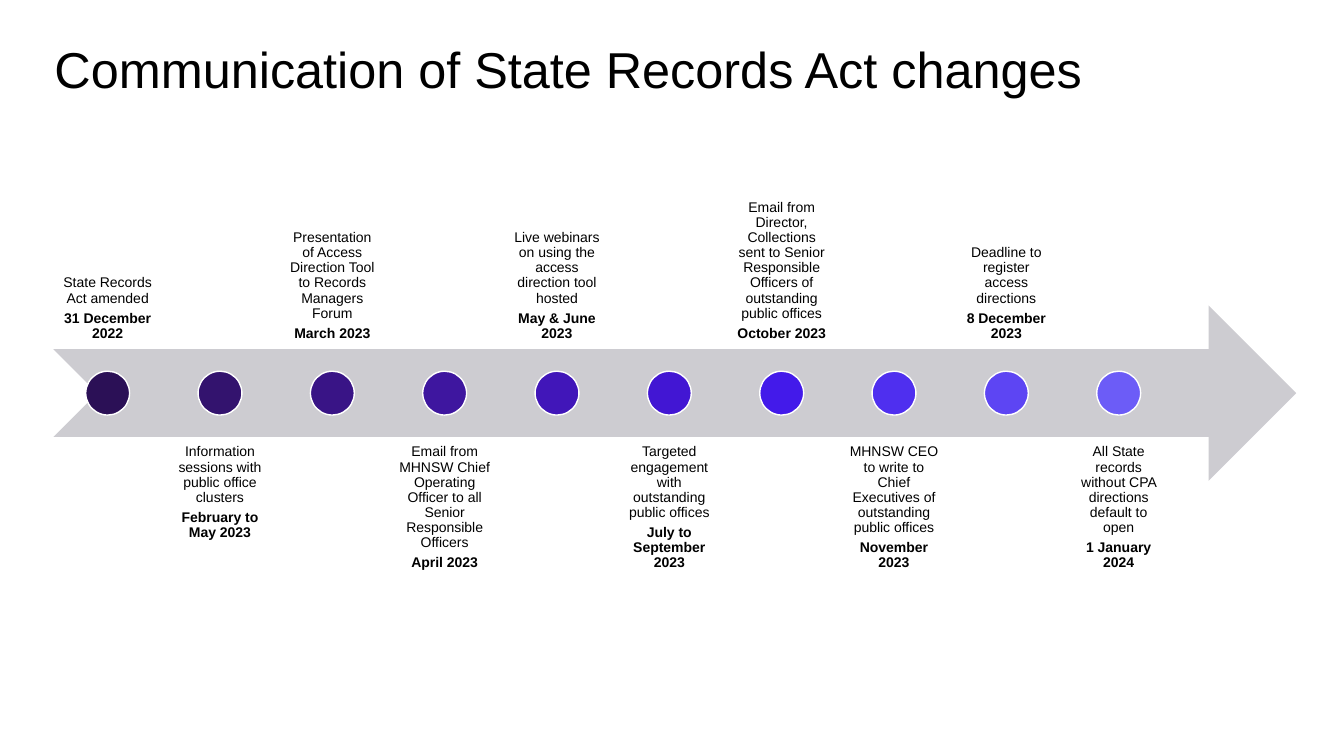
from pptx import Presentation
from pptx.dml.color import RGBColor
from pptx.enum.shapes import MSO_SHAPE
from pptx.enum.text import MSO_ANCHOR, PP_ALIGN
from pptx.util import Pt

MILESTONES = [
    ("State Records Act amended", "31 December 2022", "2B1056"),
    ("Information sessions with public office clusters", "February to May 2023", "33136E"),
    ("Presentation of Access Direction Tool to Records Managers Forum", "March 2023", "391486"),
    ("Email from MHNSW Chief Operating Officer to all Senior Responsible Officers",
     "April 2023", "3E169F"),
    ("Live webinars on using the access direction tool hosted", "May & June 2023", "4116B9"),
    ("Targeted engagement with outstanding public offices", "July to September 2023", "4216D3"),
    ("Email from Director, Collections sent to Senior Responsible Officers of "
     "outstanding public offices", "October 2023", "431AEA"),
    ("MHNSW CEO to write to Chief Executives of outstanding public offices",
     "November 2023", "4F2FEF"),
    ("Deadline to register access directions", "8 December 2023", "5D45F3"),
    ("All State records without CPA directions default to open", "1 January 2024", "6C5CF7"),
]

LEFT, WIDTH = 38.16, 887.76
ARROW_TOP, ARROW_HEIGHT = 218.16, 125.28
MIDDLE = ARROW_TOP + ARROW_HEIGHT / 2
BAND_TOP = MIDDLE - ARROW_HEIGHT / 4
BAND_BOTTOM = MIDDLE + ARROW_HEIGHT / 4
FIRST_CENTER, STEP = 76.9, 80.24
LABEL_WIDTH = 76.32
DOT_SIZE = ARROW_HEIGHT / 4


def color(hex_string):
    return RGBColor.from_string(hex_string)


def write(paragraph, text, size=10, bold=False, align=PP_ALIGN.LEFT, space_after=0):
    paragraph.alignment = align
    paragraph.line_spacing = 0.9
    paragraph.space_after = Pt(space_after)
    run = paragraph.add_run()
    run.text = text
    run.font.name = "Arial"
    run.font.size = Pt(size)
    run.font.bold = bold
    run.font.color.rgb = color("000000")


class Timeline:
    """Draws the timeline's elements on one slide."""

    arrow_fill = "CDCCD1"
    dot_line = "FFFFFF"
    label_inset = 5.6

    def __init__(self, slide):
        self.slide = slide

    def text_frame(self, left, top, width, height, inset=0, anchor=MSO_ANCHOR.TOP):
        box = self.slide.shapes.add_textbox(Pt(left), Pt(top), Pt(width), Pt(height))
        frame = box.text_frame
        frame.word_wrap = True
        frame.vertical_anchor = anchor
        frame.margin_left = frame.margin_right = Pt(inset)
        frame.margin_top = frame.margin_bottom = Pt(inset)
        return frame

    def shape(self, kind, left, top, width, height, fill, line=None):
        shape = self.slide.shapes.add_shape(kind, Pt(left), Pt(top), Pt(width), Pt(height))
        shape.shadow.inherit = False
        shape.fill.solid()
        shape.fill.fore_color.rgb = color(fill)
        if line:
            shape.line.color.rgb = color(line)
            shape.line.width = Pt(1)
        else:
            shape.line.fill.background()

    def title(self, text):
        frame = self.text_frame(LEFT + 0.72, 32.4, WIDTH, 79.2)
        write(frame.paragraphs[0], text, size=36)

    def arrow(self):
        self.shape(MSO_SHAPE.NOTCHED_RIGHT_ARROW, LEFT, ARROW_TOP, WIDTH, ARROW_HEIGHT,
                   self.arrow_fill)

    def label(self, center, above, event, date):
        top = BAND_TOP - ARROW_HEIGHT if above else BAND_BOTTOM
        anchor = MSO_ANCHOR.BOTTOM if above else MSO_ANCHOR.TOP
        frame = self.text_frame(center - LABEL_WIDTH / 2, top, LABEL_WIDTH, ARROW_HEIGHT,
                                self.label_inset, anchor)
        write(frame.paragraphs[0], event, align=PP_ALIGN.CENTER, space_after=3.5)
        write(frame.add_paragraph(), date, bold=True, align=PP_ALIGN.CENTER)

    def dot(self, center, fill):
        self.shape(MSO_SHAPE.OVAL, center - DOT_SIZE / 2, MIDDLE - DOT_SIZE / 2,
                   DOT_SIZE, DOT_SIZE, fill, self.dot_line)


def main():
    presentation = Presentation()
    presentation.slide_width, presentation.slide_height = Pt(960), Pt(540)
    timeline = Timeline(presentation.slides.add_slide(presentation.slide_layouts[6]))
    timeline.title("Communication of State Records Act changes")
    timeline.arrow()
    for index, (event, date, fill) in enumerate(MILESTONES):
        center = FIRST_CENTER + index * STEP
        timeline.label(center, index % 2 == 0, event, date)
        timeline.dot(center, fill)
    presentation.save("out.pptx")


if __name__ == "__main__":
    main()
